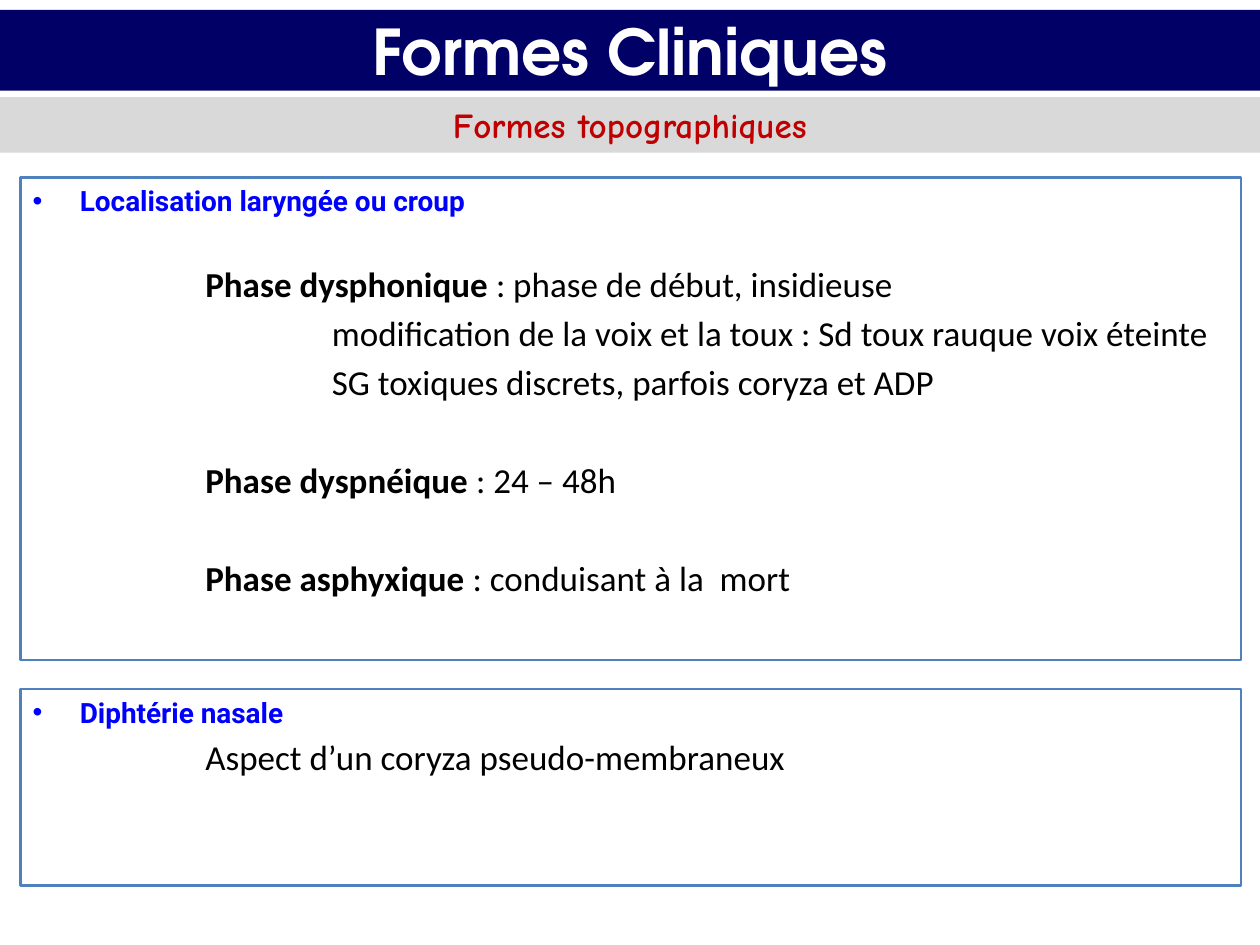
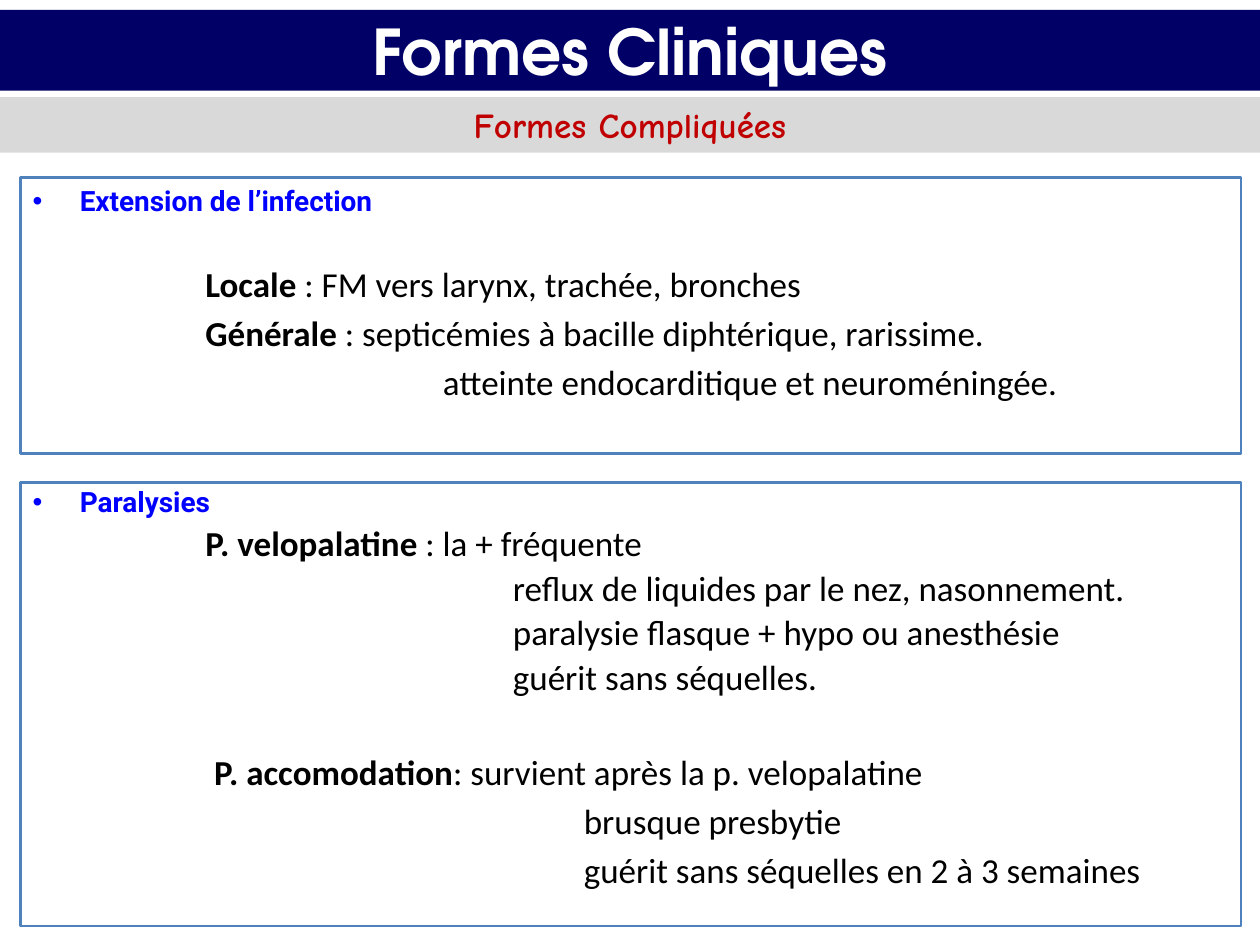
from dataclasses import dataclass
from lxml.etree import SubElement
from pptx import Presentation
from pptx.dml.color import RGBColor
from pptx.enum.shapes import MSO_SHAPE
from pptx.enum.text import MSO_ANCHOR, PP_ALIGN
from pptx.oxml.ns import qn
from pptx.util import Cm, Pt


@dataclass(frozen=True)
class Theme:
    navy: str = "000066"
    grey: str = "D9D9D9"
    border: str = "4F81BD"
    title: tuple = ("TeX Gyre Adventor", 36, "FFFFFF")
    subtitle: tuple = ("Comic Neue", 20, "C00000")
    heading: tuple = ("Roboto", 16, "0000FF")
    body: tuple = ("Calibri", 20, "000000")


theme = Theme()
width = 25.4
hang = 0.95
item, detail = 3.48, 6.03
after_heading, after_group = 26, 32

slides = [
    ("Formes topographiques", [
        (3.58, 9.73, 1, "Localisation laryngée ou croup", [
            (item, after_heading, 1, "Phase dysphonique ", ": phase de début, insidieuse"),
            (detail, 4, 1, "", "modification de la voix et la toux : Sd toux rauque voix éteinte"),
            (detail, 4, 1, "", "SG toxiques discrets, parfois coryza et ADP"),
            (item, after_group, 1, "Phase dyspnéique ", ": 24 – 48h"),
            (item, after_group, 1, "Phase asphyxique ", ": conduisant à la  mort"),
        ]),
        (13.89, 3.96, 1, "Diphtérie nasale", [
            (item, 4, 1, "", "Aspect d’un coryza pseudo-membraneux"),
        ]),
    ]),
    ("Formes Compliquées", [
        (3.58, 5.56, 1, "Extension de l’infection", [
            (item, after_heading, 1, "Locale", " : FM vers larynx, trachée, bronches"),
            (item, 4, 1, "Générale", " : septicémies à bacille diphtérique, rarissime."),
            (8.27, 4, 1, "", "atteinte endocarditique et neuroméningée."),
        ]),
        (9.73, 8.94, 0.9, "Paralysies", [
            (item, 4, 0.9, "P. velopalatine", " : la + fréquente"),
            (9.68, 4, 0.9, "", "reflux de liquides par le nez, nasonnement."),
            (9.68, 4, 0.9, "", "paralysie flasque + hypo ou anesthésie"),
            (9.68, 4, 0.9, "", "guérit sans séquelles."),
            (3.66, 30, 1, "P. accomodation", ": survient après la p. velopalatine"),
            (11.11, 4, 1, "", "brusque presbytie"),
            (11.11, 4, 1, "", "guérit sans séquelles en 2 à 3 semaines"),
        ]),
    ]),
]


def add_box(s, left, top, w, h, fill=None, line=None):
    sp = s.shapes.add_shape(MSO_SHAPE.RECTANGLE, Cm(left), Cm(top), Cm(w), Cm(h))
    sp.shadow.inherit = False
    if fill:
        sp.fill.solid()
        sp.fill.fore_color.rgb = RGBColor.from_string(fill)
    else:
        sp.fill.background()
    if line:
        sp.line.color.rgb = RGBColor.from_string(line)
        sp.line.width = Pt(1.5)
    else:
        sp.line.fill.background()
    tf = sp.text_frame
    tf.word_wrap = True
    tf.vertical_anchor = MSO_ANCHOR.TOP
    return tf


def add_run(p, text, style, bold):
    r = p.add_run()
    r.text = text
    name, size, color = style
    r.font.name = name
    r.font.size = Pt(size)
    r.font.bold = bold
    r.font.color.rgb = RGBColor.from_string(color)


prs = Presentation()
prs.slide_width, prs.slide_height = Cm(width), Cm(19.05)

for subtitle, panels in slides:
    s = prs.slides.add_slide(prs.slide_layouts[6])

    for top, h, fill, text, style in [
        (0.2, 1.63, theme.navy, "Formes Cliniques", theme.title),
        (1.96, 1.12, theme.grey, subtitle, theme.subtitle),
    ]:
        tf = add_box(s, 0, top, width, h, fill=fill)
        tf.vertical_anchor = MSO_ANCHOR.MIDDLE
        p = tf.paragraphs[0]
        p.alignment = PP_ALIGN.CENTER
        add_run(p, text, style, True)

    for top, h, spacing, heading, lines in panels:
        tf = add_box(s, 0.41, top, 24.61, h, line=theme.border)
        p = tf.paragraphs[0]
        p.alignment = PP_ALIGN.LEFT
        p.line_spacing = spacing
        p.space_before = Pt(3)
        pPr = p._p.get_or_add_pPr()
        pPr.set("marL", str(Cm(hang)))
        pPr.set("indent", str(-Cm(hang)))
        SubElement(pPr, qn("a:buFont"), typeface="Arial")
        SubElement(pPr, qn("a:buChar"), char="•")
        add_run(p, heading, theme.heading, True)

        for indent, before, spacing, label, text in lines:
            p = tf.add_paragraph()
            p.alignment = PP_ALIGN.LEFT
            p.line_spacing = spacing
            p.space_before = Pt(before)
            p._p.get_or_add_pPr().set("marL", str(Cm(indent)))
            if label:
                add_run(p, label, theme.body, True)
            add_run(p, text, theme.body, False)

prs.save("out.pptx")
